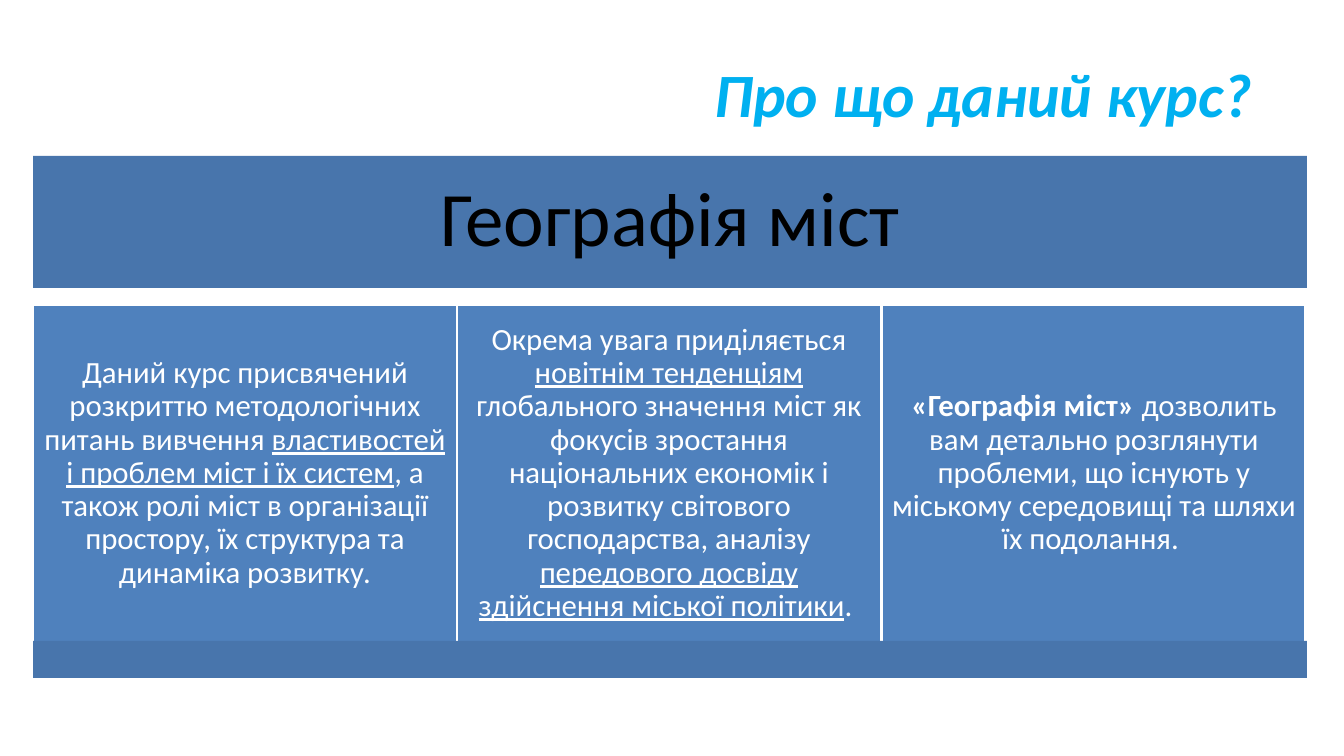
from pptx import Presentation
from pptx.dml.color import RGBColor
from pptx.enum.shapes import MSO_SHAPE
from pptx.enum.text import MSO_ANCHOR, MSO_AUTO_SIZE, PP_ALIGN
from pptx.util import Emu, Pt

SKY = RGBColor(0x00, 0xB0, 0xF0)
DARK_BLUE = RGBColor(0x48, 0x75, 0xAC)
BLUE = RGBColor(0x4F, 0x81, 0xBD)
WHITE = RGBColor(0xFF, 0xFF, 0xFF)
BLACK = RGBColor(0x00, 0x00, 0x00)

LEFT, WIDTH = 33, 1274
CARDS = [
    [("Даний курс присвячений розкриттю методологічних питань вивчення ", ""),
     ("властивостей і проблем міст і їх систем", "u"),
     (", а також ролі міст в організації простору, їх структура та динаміка розвитку.", "")],
    [("Окрема увага приділяється ", ""),
     ("новітнім тенденціям ", "u"),
     ("глобального значення міст як фокусів зростання національних економік "
      "і розвитку світового господарства, аналізу ", ""),
     ("передового досвіду здійснення міської політики", "u"),
     (". ", "")],
    [("«Географія міст»", "b"),
     (" дозволить вам детально розглянути проблеми, що існують у міському "
      "середовищі та шляхи їх подолання. ", "")],
]


class Deck:
    """Holds the slide style and draws elements in px."""

    font = "Calibri"
    scale = 12192000 / 1344

    def __init__(self):
        self.prs = Presentation()
        self.prs.slide_width, self.prs.slide_height = self.px(1344), self.px(756)
        self.s = self.prs.slides.add_slide(self.prs.slide_layouts[5])

    def px(self, n):
        return Emu(round(n * self.scale))

    def style(self, p, size, color, align):
        p.alignment = align
        p.font.name, p.font.size = self.font, Pt(size)
        p.font.color.rgb = color

    def title(self, text, x, y, w, h):
        sp = self.s.shapes.title
        sp.left, sp.top, sp.width, sp.height = map(self.px, (x, y, w, h))
        tf = sp.text_frame
        tf.text = text
        tf.vertical_anchor = MSO_ANCHOR.MIDDLE
        tf.auto_size = MSO_AUTO_SIZE.NONE
        p = tf.paragraphs[0]
        self.style(p, 44, SKY, PP_ALIGN.RIGHT)
        p.font.bold = p.font.italic = True

    def rect(self, x, y, w, h, fill, line=None):
        sp = self.s.shapes.add_shape(MSO_SHAPE.RECTANGLE, *map(self.px, (x, y, w, h)))
        sp.shadow.inherit = False
        sp.fill.solid()
        sp.fill.fore_color.rgb = fill
        if line is None:
            sp.line.fill.background()
        else:
            sp.line.color.rgb = line
            sp.line.width = Pt(2)
        return sp

    def label(self, sp, runs, size, color, inset):
        tf = sp.text_frame
        tf.word_wrap = True
        tf.vertical_anchor = MSO_ANCHOR.MIDDLE
        tf.margin_left = tf.margin_right = self.px(inset)
        tf.margin_top = tf.margin_bottom = self.px(inset)
        p = tf.paragraphs[0]
        p.line_spacing = 0.9
        self.style(p, size, color, PP_ALIGN.CENTER)
        for text, mark in runs:
            r = p.add_run()
            r.text = text
            if mark == "u":
                r.font.underline = True
            elif mark == "b":
                r.font.bold = True


def main():
    deck = Deck()
    deck.title("Про що даний курс? ", 67, 30, 1210, 126)
    header = deck.rect(LEFT, 156, WIDTH, 132, DARK_BLUE)
    deck.label(header, [("Географія міст", "")], 55, BLACK, 23)
    for i, runs in enumerate(CARDS):
        card = deck.rect(LEFT + WIDTH * i // 3, 305, WIDTH // 3, 337, BLUE, WHITE)
        deck.label(card, runs, 22, WHITE, 9)
    deck.rect(LEFT, 641, WIDTH, 37, DARK_BLUE)
    deck.prs.save("out.pptx")


if __name__ == "__main__":
    main()
